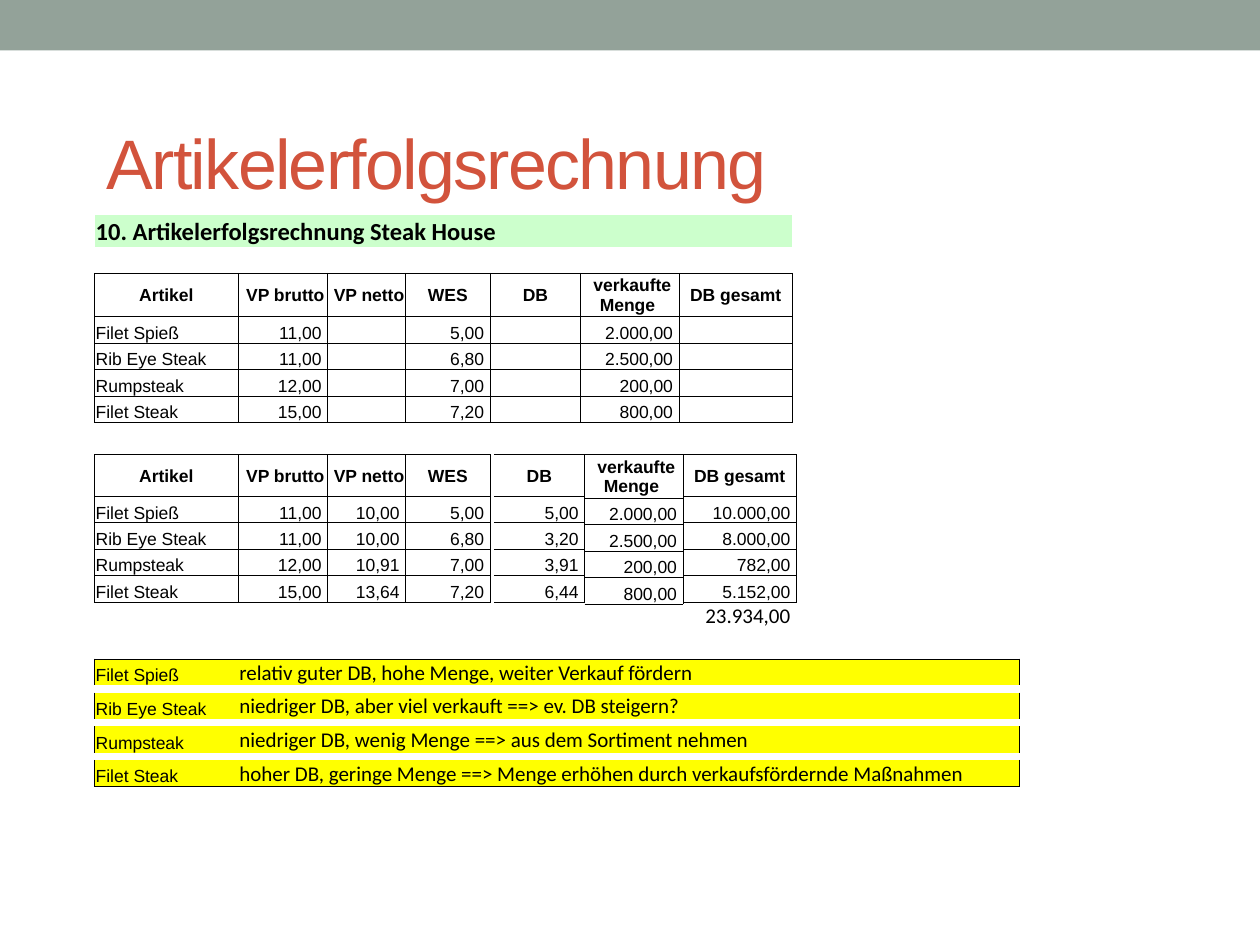
from dataclasses import dataclass
from itertools import accumulate

from lxml import etree
from pptx import Presentation
from pptx.dml.color import RGBColor
from pptx.enum import shapes, text
from pptx.oxml import ns
from pptx.util import Inches, Pt


@dataclass(frozen=True)
class Theme:
    ink: str = "000000"
    title: str = "D2533C"
    band: str = "93A299"
    heading_fill: str = "CCFFCC"
    note_fill: str = "FFFF00"
    rule: float = 0.5
    title_size: int = 40
    heading_size: int = 14
    note_size: int = 12
    body_size: int = 10
    sans: str = "Arial"
    humanist: str = "Calibri"


THEME = Theme()
WIDTH, HEIGHT = 10, 7.5

# Grid in inches
LEFT = 0.75
COLUMNS = [1.14, 0.71, 0.62, 0.67, 0.72, 0.78, 0.9]
ROW, HEAD_ROW, HEADING_ROW = 0.21, 0.33, 0.25
TASK_TOP, SOLUTION_TOP, NOTES_TOP = 1.71, 3.61, 5.23
NOTE_STEP = 0.267
SPLIT, SPLIT_LEFT = 4, 3.92  # the solution breaks after the WES column
NOTE_COLUMNS = [COLUMNS[0], 4.4, 0.9, 0.9]

HEADERS = ["Artikel", "VP brutto", "VP netto", "WES", "DB", "verkaufte Menge", "DB gesamt"]
ARTICLES = [
    ["Filet Spieß", "11,00", "10,00", "5,00", "5,00", "2.000,00", "10.000,00"],
    ["Rib Eye Steak", "11,00", "10,00", "6,80", "3,20", "2.500,00", "8.000,00"],
    ["Rumpsteak", "12,00", "10,91", "7,00", "3,91", "200,00", "782,00"],
    ["Filet Steak", "15,00", "13,64", "7,20", "6,44", "800,00", "5.152,00"],
]
TOTAL = "23.934,00"
TO_CALCULATE = {"VP netto", "DB", "DB gesamt"}
VERDICTS = [
    "relativ guter DB, hohe Menge, weiter Verkauf fördern",
    "niedriger DB, aber viel verkauft ==> ev. DB steigern?",
    "niedriger DB, wenig Menge ==> aus dem Sortiment nehmen",
    "hoher DB, geringe Menge ==> Menge erhöhen durch verkaufsfördernde Maßnahmen",
]

# Role: alignment, anchor, font, size, bold
ALIGN, ANCHOR = text.PP_ALIGN, text.MSO_ANCHOR
ROLES = {
    "heading": (ALIGN.LEFT, ANCHOR.BOTTOM, THEME.humanist, THEME.heading_size, True),
    "header": (ALIGN.CENTER, ANCHOR.MIDDLE, THEME.sans, THEME.body_size, True),
    "label": (ALIGN.LEFT, ANCHOR.BOTTOM, THEME.sans, THEME.body_size, False),
    "number": (ALIGN.RIGHT, ANCHOR.BOTTOM, THEME.sans, THEME.body_size, False),
    "total": (ALIGN.RIGHT, ANCHOR.BOTTOM, THEME.humanist, THEME.note_size, False),
    "verdict": (ALIGN.LEFT, ANCHOR.BOTTOM, THEME.humanist, THEME.note_size, False),
}


@dataclass
class Entry:
    """Content of one table cell; sides names the ruled edges out of L, R, T, B."""
    words: str = ""
    role: str = "label"
    sides: str = ""
    fill: str = ""


def rule_cell(cell, sides):
    properties = cell._tc.get_or_add_tcPr()
    for side in "LRTB":
        line = etree.SubElement(properties, ns.qn(f"a:ln{side}"), w=str(Pt(THEME.rule)))
        if side in sides:
            solid = etree.SubElement(line, ns.qn("a:solidFill"))
            etree.SubElement(solid, ns.qn("a:srgbClr"), val=THEME.ink)
        else:
            etree.SubElement(line, ns.qn("a:noFill"))


def write(paragraph, words, font, size, color, bold=False):
    run = paragraph.add_run()
    run.text = words
    looks = {"name": font, "size": Pt(size), "bold": bold}
    for name, value in looks.items():
        setattr(run.font, name, value)
    run.font.color.rgb = RGBColor.from_string(color)
    return run


def fill_cell(cell, entry):
    align, anchor, font, size, bold = ROLES[entry.role]
    layout = {"margin_left": Inches(0.01), "margin_right": Inches(0.01),
              "margin_top": Inches(0.01), "margin_bottom": 0, "vertical_anchor": anchor}
    for name, value in layout.items():
        setattr(cell, name, value)
    rule_cell(cell, entry.sides)
    if entry.fill:
        cell.fill.solid()
        cell.fill.fore_color.rgb = RGBColor.from_string(entry.fill)
    else:
        cell.fill.background()
    paragraph = cell.text_frame.paragraphs[0]
    paragraph.alignment = align
    if entry.words:
        write(paragraph, entry.words, font, size, THEME.ink, bold)
    else:  # keeps an empty row from growing to the default type size
        etree.SubElement(paragraph._p, ns.qn("a:endParaRPr"), sz=str(size * 100))


def add_grid(slide, left, top, widths, heights, rows):
    frame = slide.shapes.add_table(len(heights), len(widths), Inches(left), Inches(top),
                                   Inches(sum(widths)), Inches(sum(heights)))
    table = frame.table
    table.first_row = table.horz_banding = False
    for column, width in zip(table.columns, widths):
        column.width = Inches(width)
    for row, height in zip(table.rows, heights):
        row.height = Inches(height)
    for r, entries in enumerate(rows):
        for c, entry in enumerate(entries):
            fill_cell(table.cell(r, c), entry)
    return table


def header_entry(header, sides):
    return Entry(header if header == HEADERS[0] else f" {header} ", "header", sides)


def value_entry(header, value, sides):
    if header == HEADERS[0]:
        return Entry(value, "label", sides)
    return Entry(f" {value} " if value else "", "number", sides)


def article_rows(first, last, sides, hidden=()):
    """Header and article rows for columns first to last, leaving hidden columns blank."""
    headers = HEADERS[first:last]
    rows = [[header_entry(header, sides) for header in headers]]
    for article in ARTICLES:
        rows.append([value_entry(header, "" if header in hidden else value, sides)
                     for header, value in zip(headers, article[first:last])])
    return rows


def add_task(slide):
    count = len(HEADERS)
    heading = [Entry("10. Artikelerfolgsrechnung Steak House" if c == 0 else "",
                     "heading", fill=THEME.heading_fill) for c in range(count)]
    gap = [Entry(sides="B") for _ in HEADERS]
    rows = [heading, gap] + article_rows(0, count, "LRTB", TO_CALCULATE)
    heights = [HEADING_ROW, ROW, HEAD_ROW] + [ROW] * len(ARTICLES)
    table = add_grid(slide, LEFT, TASK_TOP, COLUMNS, heights, rows)
    table.cell(0, 0).merge(table.cell(0, 4))


def add_solution(slide):
    heights = [HEAD_ROW] + [ROW] * len(ARTICLES)
    add_grid(slide, LEFT, SOLUTION_TOP, COLUMNS[:SPLIT], heights,
             article_rows(0, SPLIT, "LRTB"))
    lefts = accumulate(COLUMNS[SPLIT:], initial=SPLIT_LEFT)
    for c, left in zip(range(SPLIT, len(COLUMNS)), lefts):
        rows = article_rows(c, c + 1, "RTB")
        if c == len(COLUMNS) - 1:
            rows.append([Entry(f" {TOTAL} ", "total", "T")])
        add_grid(slide, left, SOLUTION_TOP, [COLUMNS[c]],
                 heights + [ROW] * (len(rows) - len(heights)), rows)


def add_notes(slide):
    final = len(VERDICTS) - 1
    for i, (article, verdict) in enumerate(zip(ARTICLES, VERDICTS)):
        edge = {0: "T", final: "B"}.get(i, "")
        widths = NOTE_COLUMNS
        if i == final:
            widths = [NOTE_COLUMNS[0], sum(NOTE_COLUMNS[1:])]
        row = [Entry(article[0], "label"), Entry(verdict, "verdict")]
        row += [Entry() for _ in widths[2:]]
        for entry in row:
            entry.sides, entry.fill = edge, THEME.note_fill
        row[0].sides += "L"
        row[-1].sides += "R"
        add_grid(slide, LEFT, NOTES_TOP + i * NOTE_STEP, widths, [ROW], [row])


def add_band(slide):
    band = slide.shapes.add_shape(shapes.MSO_SHAPE.RECTANGLE, 0, 0, Inches(WIDTH), Inches(0.4))
    band.shadow.inherit = False
    band.fill.solid()
    band.fill.fore_color.rgb = RGBColor.from_string(THEME.band)
    band.line.fill.background()


def add_title(slide):
    box = slide.shapes.add_textbox(Inches(LEFT), Inches(0.66),
                                   Inches(WIDTH - 2 * LEFT), Inches(1.25))
    box.text_frame.word_wrap = True
    box.text_frame.vertical_anchor = ANCHOR.MIDDLE
    run = write(box.text_frame.paragraphs[0], "Artikelerfolgsrechnung",
                THEME.sans, THEME.title_size, THEME.title)
    run._r.get_or_add_rPr().set("spc", "-100")


def main():
    deck = Presentation()
    deck.slide_width, deck.slide_height = Inches(WIDTH), Inches(HEIGHT)
    slide = deck.slides.add_slide(deck.slide_layouts[6])
    for add in (add_band, add_title, add_task, add_solution, add_notes):
        add(slide)
    deck.save("out.pptx")


if __name__ == "__main__":
    main()
